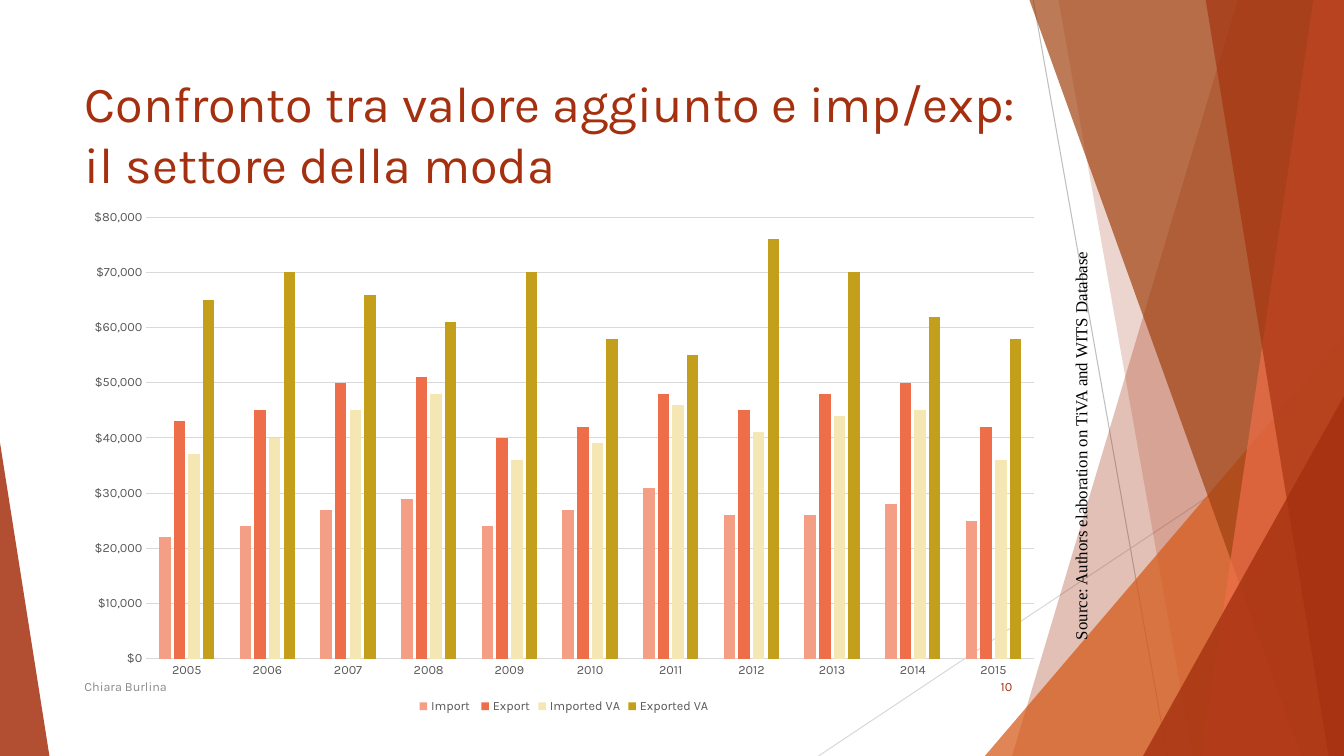
from lxml.etree import SubElement
from pptx import Presentation
from pptx.chart.data import CategoryChartData
from pptx.dml.color import RGBColor
from pptx.enum.chart import XL_CHART_TYPE, XL_LEGEND_POSITION, XL_TICK_MARK
from pptx.enum.shapes import MSO_CONNECTOR, MSO_SHAPE
from pptx.enum.text import MSO_ANCHOR, MSO_AUTO_SIZE, PP_ALIGN
from pptx.oxml.ns import qn
from pptx.util import Inches, Pt

RUST, BROWN, ORANGE, CORAL = "A5300F", "A04210", "D55816", "EE6E4A"
GRID, LABEL = "D9D9D9", "595959"


def colour(value):
    return RGBColor.from_string(value)


class SlideBuilder:
    """Places elements on one slide; lengths are percent of its width and height."""

    font = "Karla"

    def __init__(self, deck):
        self.deck = deck
        self.page = deck.slides.add_slide(deck.slide_layouts[5])

    def across(self, share):
        return round(self.deck.slide_width * share / 100)

    def down(self, share):
        return round(self.deck.slide_height * share / 100)

    def frame(self, left, top, width, height):
        return self.across(left), self.down(top), self.across(width), self.down(height)

    def line(self, start, end, value):
        line = self.page.shapes.add_connector(
            MSO_CONNECTOR.STRAIGHT, self.across(start[0]), self.down(start[1]),
            self.across(end[0]), self.down(end[1]))
        line.line.color.rgb = colour(value)
        line.line.width = Pt(0.75)
        SubElement(line.element.spPr, qn("a:effectLst"))

    def paint(self, shape, value, opacity):
        shape.shadow.inherit = False
        shape.fill.solid()
        shape.fill.fore_color.rgb = colour(value)
        shape.line.fill.background()
        fill = shape.element.spPr.find(".//" + qn("a:srgbClr"))
        SubElement(fill, qn("a:alpha")).set("val", str(opacity * 1000))

    def panel(self, top_left, bottom_left, value, opacity):
        """A full-height band from a slanted left edge to the slide's right edge."""
        top = -0.1
        corners = [(100, top), (100, 100), (bottom_left, 100)]
        outline = self.page.shapes.build_freeform(self.across(top_left), self.down(top))
        outline.add_line_segments([(self.across(x), self.down(y)) for x, y in corners])
        self.paint(outline.convert_to_shape(), value, opacity)

    def triangle(self, left, top, width, apex, value, opacity):
        """A triangle that stands on the bottom edge of the slide."""
        shape = self.page.shapes.add_shape(
            MSO_SHAPE.ISOSCELES_TRIANGLE, *self.frame(left, top, width, 100 - top))
        shape.adjustments[0] = apex
        self.paint(shape, value, opacity)

    def add_span(self, para, text, size, value, font=None):
        span = para.add_run()
        span.text = text
        span.font.size = Pt(size)
        span.font.name = font or self.font
        span.font.color.rgb = colour(value)

    def title(self, lines, area):
        box = self.page.shapes.title
        box.left, box.top, box.width, box.height = self.frame(*area)
        box.element.getparent().append(box.element)  # in front of the decoration
        box.text_frame.word_wrap = True
        box.text_frame.auto_size = MSO_AUTO_SIZE.NONE
        box.text_frame.vertical_anchor = MSO_ANCHOR.TOP
        para = box.text_frame.paragraphs[0]
        para.alignment = PP_ALIGN.LEFT
        for number, text in enumerate(lines):
            if number:
                para.add_line_break()
            self.add_span(para, text, 36, RUST)

    def text(self, text, area, size, value, align=PP_ALIGN.LEFT,
             anchor=MSO_ANCHOR.MIDDLE, font=None):
        box = self.page.shapes.add_textbox(*self.frame(*area))
        box.text_frame.word_wrap = True
        box.text_frame.vertical_anchor = anchor
        para = box.text_frame.paragraphs[0]
        para.alignment = align
        self.add_span(para, text, size, value, font)
        return box

    def style_font(self, font, size, value):
        font.name, font.size = self.font, Pt(size)
        font.color.rgb = colour(value)

    def columns(self, categories, series, area):
        data = CategoryChartData(number_format="[$$-409]#,##0")
        data.categories = categories
        for name, _, thousands in series:
            data.add_series(name, [value * 1000 for value in thousands])
        chart = self.page.shapes.add_chart(
            XL_CHART_TYPE.COLUMN_CLUSTERED, *self.frame(*area), data).chart
        chart.has_title = False
        self.style_font(chart.font, 10, "000000")

        plot = chart.plots[0]
        plot.gap_width, plot.overlap = 219, -27
        plot.vary_by_categories = False
        for bars, (_, value, _) in zip(plot.series, series):
            bars.format.fill.solid()
            bars.format.fill.fore_color.rgb = colour(value)

        for axis in (chart.category_axis, chart.value_axis):
            axis.major_tick_mark = axis.minor_tick_mark = XL_TICK_MARK.NONE
            self.style_font(axis.tick_labels.font, 9, LABEL)
        amounts = chart.value_axis
        amounts.minimum_scale, amounts.maximum_scale = 0, 80000
        amounts.major_unit = 10000
        amounts.tick_labels.number_format = "[$$-409]#,##0"
        amounts.tick_labels.number_format_is_linked = False
        amounts.format.line.fill.background()
        for rule in (chart.category_axis.format.line, amounts.major_gridlines.format.line):
            rule.color.rgb = colour(GRID)
            rule.width = Pt(0.75)

        chart.has_legend = True
        chart.legend.position = XL_LEGEND_POSITION.BOTTOM
        chart.legend.include_in_layout = False
        self.style_font(chart.legend.font, 9, LABEL)


def main():
    deck = Presentation()
    deck.slide_width, deck.slide_height = Inches(13.33), Inches(7.5)
    slide = SlideBuilder(deck)

    # Decoration, from back to front
    slide.line((76.88, 0), (86.85, 100), "BFBFBF")
    slide.line((100, 53.73), (60.9, 100), GRID)
    slide.panel(92.1, 75.3, RUST, 30)
    slide.panel(78.75, 88.73, RUST, 20)
    slide.triangle(73.28, 44.4, 26.72, 1, ORANGE, 72)
    slide.panel(76.58, 96.83, BROWN, 70)
    slide.panel(97.73, 89.4, CORAL, 70)
    slide.panel(89.7, 98.85, RUST, 65)
    slide.triangle(85.05, 52.4, 14.95, 1, RUST, 80)
    slide.triangle(0, 58.53, 3.68, 0, RUST, 85)

    # Title
    margin = 5.55
    slide.title(["Confronto tra valore aggiunto e imp/exp:", "il settore della moda"],
                (margin, 8.93, 71.63, 19.2))

    # Chart, values in thousands of dollars
    trade = [
        ("Import ", "F49E86", [22, 24, 27, 29, 24, 27, 31, 26, 26, 28, 25]),
        ("Export", CORAL, [43, 45, 50, 51, 40, 42, 48, 45, 48, 50, 42]),
        ("Imported VA", "F5E7B4", [37, 40, 45, 48, 36, 39, 46, 41, 44, 45, 36]),
        ("Exported VA", "C39F1B", [65, 70, 66, 61, 70, 58, 55, 76, 70, 62, 58]),
    ]
    years = [str(year) for year in range(2005, 2016)]
    slide.columns(years, trade, (margin, 26.4, 72.83, 68.53))

    # Source note, turned to read upwards
    note = slide.text("Source: Authors elaboration on TiVA and WITS Database",
                      (64.28, 58.67, 32.25, 4), 12, "000000", PP_ALIGN.RIGHT,
                      MSO_ANCHOR.TOP, "Times New Roman")
    note.text_frame.auto_size = MSO_AUTO_SIZE.SHAPE_TO_FIT_TEXT
    note.rotation = 270

    # Footer
    slide.text("Chiara Burlina", (margin, 88.13, 51.68, 5.33), 9, "8C8C8C")
    slide.text("10", (70.43, 88.13, 5.63, 5.33), 9, RUST, PP_ALIGN.RIGHT)

    deck.save("out.pptx")


if __name__ == "__main__":
    main()
